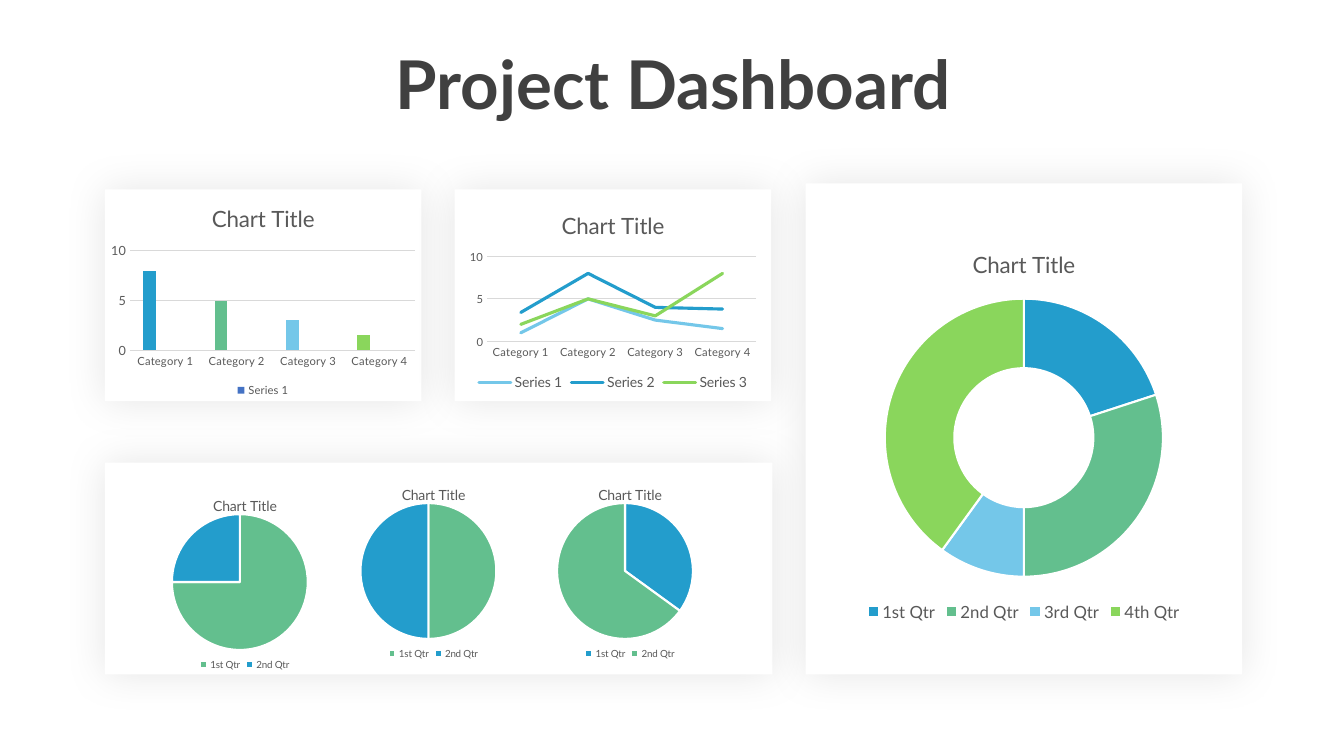
from dataclasses import dataclass
from typing import Optional

from lxml.etree import SubElement
from pptx import Presentation
from pptx.chart.chart import Chart
from pptx.chart.data import CategoryChartData
from pptx.dml.color import RGBColor
from pptx.enum.chart import XL_CHART_TYPE as ChartType, XL_LEGEND_POSITION as LegendPosition
from pptx.enum.chart import XL_MARKER_STYLE as Marker, XL_TICK_MARK as TickMark
from pptx.enum.shapes import MSO_SHAPE as Shape
from pptx.enum.text import MSO_ANCHOR as Anchor, MSO_AUTO_SIZE as AutoSize, PP_ALIGN as Align
from pptx.oxml import parse_xml
from pptx.oxml.ns import nsdecls, qn
from pptx.slide import Slide
from pptx.util import Inches, Pt

FONT = "Lato"
COLORS = {
    "white": "FFFFFF", "heading": "404040", "text": "595959", "grid": "D9D9D9",
    "blue": "239DCC", "green": "63BF8E", "sky": "74C7E9", "lime": "8AD65C",
    "indigo": "4472C4", "orange": "ED7D31", "gray": "A5A5A5",
}
PALETTE = ("blue", "green", "sky", "lime")
CATEGORIES = tuple(f"Category {number}" for number in range(1, 5))
QUARTERS = ("1st Qtr", "2nd Qtr", "3rd Qtr", "4th Qtr")


@dataclass(frozen=True)
class Box:
    left: float
    top: float
    width: float
    height: float

    def lengths(self) -> tuple:
        return tuple(Inches(n) for n in (self.left, self.top, self.width, self.height))


@dataclass(frozen=True)
class ChartSpec:
    kind: ChartType
    box: Box
    categories: tuple
    series: tuple
    series_colors: tuple = ()
    point_colors: tuple = ()
    title_size: int = 16
    legend_size: int = 8
    value_size: int = 8
    hidden_entries: tuple = ()
    plot: Optional[Box] = None


CARDS = (
    Box(1.04, 1.88, 3.14, 2.1),
    Box(4.51, 1.88, 3.14, 2.1),
    Box(1.04, 4.59, 6.62, 2.1),
    Box(7.99, 1.82, 4.33, 4.87),
)


def pie(left: float, top: float, values: tuple, colors: tuple) -> ChartSpec:
    return ChartSpec(
        ChartType.PIE, Box(left, top, 2.82, 1.88), QUARTERS[:2], (values,),
        point_colors=colors, title_size=10, legend_size=7,
        plot=Box(0.243, 0.155, 0.478, 0.717),
    )


CHARTS = (
    ChartSpec(
        ChartType.COLUMN_CLUSTERED, CARDS[0], CATEGORIES,
        ((8, 5, 3, 1.5), (None,) * 4, (None,) * 4),
        series_colors=("indigo", "orange", "gray"), point_colors=PALETTE,
        value_size=9, hidden_entries=(1, 2),
    ),
    ChartSpec(
        ChartType.LINE, Box(4.6, 1.95, 2.96, 1.97), CATEGORIES,
        ((1, 5, 2.5, 1.5), (3.4, 8, 4, 3.8), (2, 5, 3, 8)),
        series_colors=("sky", "blue", "lime"), legend_size=10,
    ),
    pie(1.02, 4.81, (75, 25), ("green", "blue")),
    pie(2.89, 4.7, (50, 50), ("green", "blue")),
    pie(4.84, 4.7, (35, 65), ("blue", "green")),
    ChartSpec(
        ChartType.DOUGHNUT, Box(7.22, 2.3, 5.87, 3.91), QUARTERS, ((20, 30, 10, 40),),
        point_colors=PALETTE, legend_size=12,
    ),
)


def color(name: str) -> RGBColor:
    return RGBColor.from_string(COLORS[name])


def style_font(font, size: float, name: str = "text", bold: bool = False) -> None:
    font.name, font.size, font.bold = FONT, Pt(size), bold
    font.color.rgb = color(name)


def style_line(line, name: str, width: float) -> None:
    line.color.rgb = color(name)
    line.width = Pt(width)


def add_heading(page: Slide, text: str) -> None:
    title = page.shapes.title
    title.left, title.top, title.width, title.height = Box(1.41, 0.37, 10.54, 0.91).lengths()
    frame = title.text_frame
    frame.auto_size = AutoSize.NONE
    frame.vertical_anchor = Anchor.TOP
    para = frame.paragraphs[0]
    para.alignment = Align.CENTER
    span = para.add_run()
    span.text = text
    style_font(span.font, 48, "heading", bold=True)


def add_card(page: Slide, box: Box) -> None:
    card = page.shapes.add_shape(Shape.RECTANGLE, *box.lengths())
    card.fill.solid()
    card.fill.fore_color.rgb = color("white")
    card.line.fill.background()
    # Soft glow: black at 10 percent, blurred by 30 points
    card._element.spPr.append(parse_xml(
        f'<a:effectLst {nsdecls("a")}><a:outerShdw blurRad="{Pt(30)}" dist="0" dir="0" '
        'algn="ctr" rotWithShape="0"><a:srgbClr val="000000"><a:alpha val="10000"/>'
        '</a:srgbClr></a:outerShdw></a:effectLst>'))


def style_axes(chart: Chart, value_size: float) -> None:
    for axis, size in ((chart.category_axis, 8), (chart.value_axis, value_size)):
        axis.major_tick_mark = axis.minor_tick_mark = TickMark.NONE
        style_font(axis.tick_labels.font, size)
    style_line(chart.category_axis.format.line, "grid", 0.75)
    values = chart.value_axis
    values.format.line.fill.background()
    values.minimum_scale, values.maximum_scale, values.major_unit = 0, 10, 5
    style_line(values.major_gridlines.format.line, "grid", 0.75)


def place_plot(chart: Chart, plot: Box) -> None:
    area = chart._chartSpace.chart.plotArea
    for old in area.findall(qn("c:layout")):
        area.remove(old)
    layout = parse_xml(f'<c:layout {nsdecls("c")}><c:manualLayout/></c:layout>')
    settings = (("layoutTarget", "inner"), ("xMode", "edge"), ("yMode", "edge"),
                ("x", plot.left), ("y", plot.top), ("w", plot.width), ("h", plot.height))
    for tag, value in settings:
        SubElement(layout[0], qn(f"c:{tag}")).set("val", str(value))
    area.insert(0, layout)


def add_chart(page: Slide, spec: ChartSpec) -> None:
    data = CategoryChartData()
    data.categories = spec.categories
    for number, values in enumerate(spec.series, 1):
        data.add_series(f"Series {number}", values)
    chart = page.shapes.add_chart(spec.kind, *spec.box.lengths(), data).chart
    plot = chart.plots[0]
    is_round = spec.kind in (ChartType.PIE, ChartType.DOUGHNUT)
    plot.vary_by_categories = is_round

    # Title and legend
    chart.font.name, chart.font.size = "Calibri", Pt(10)
    chart.has_title = True
    span = chart.chart_title.text_frame.paragraphs[0].add_run()
    span.text = "Chart Title"
    style_font(span.font, spec.title_size)
    chart.has_legend = True
    legend = chart.legend
    legend.position, legend.include_in_layout = LegendPosition.BOTTOM, False
    style_font(legend.font, spec.legend_size)
    for place, index in enumerate(spec.hidden_entries, 1):
        legend._element.insert(place, parse_xml(
            f'<c:legendEntry {nsdecls("c")}><c:idx val="{index}"/>'
            '<c:delete val="1"/></c:legendEntry>'))

    # Series and point colours
    for series, name in zip(plot.series, spec.series_colors):
        if spec.kind == ChartType.LINE:
            series.smooth = False
            series.marker.style = Marker.NONE
            style_line(series.format.line, name, 2.25)
            series.format.line._ln.set("cap", "rnd")
        else:
            series.format.fill.solid()
            series.format.fill.fore_color.rgb = color(name)
    for index, name in enumerate(spec.point_colors):
        point = plot.series[0].points[index].format
        point.fill.solid()
        point.fill.fore_color.rgb = color(name)
        if is_round:
            style_line(point.line, "white", 1.5)

    # Settings of each chart kind
    if not is_round:
        style_axes(chart, spec.value_size)
    if spec.kind == ChartType.COLUMN_CLUSTERED:
        plot.gap_width, plot.overlap = 219, -27
    if spec.kind == ChartType.DOUGHNUT:
        plot._element.find(qn("c:holeSize")).set("val", "75")
    if spec.plot:
        place_plot(chart, spec.plot)


def main() -> None:
    deck = Presentation()
    deck.slide_width, deck.slide_height = Inches(13.33), Inches(7.5)
    page = deck.slides.add_slide(deck.slide_layouts.get_by_name("Title Only"))
    add_heading(page, "Project Dashboard")
    for box in CARDS:
        add_card(page, box)
    for spec in CHARTS:
        add_chart(page, spec)
    deck.save("out.pptx")


if __name__ == "__main__":
    main()
